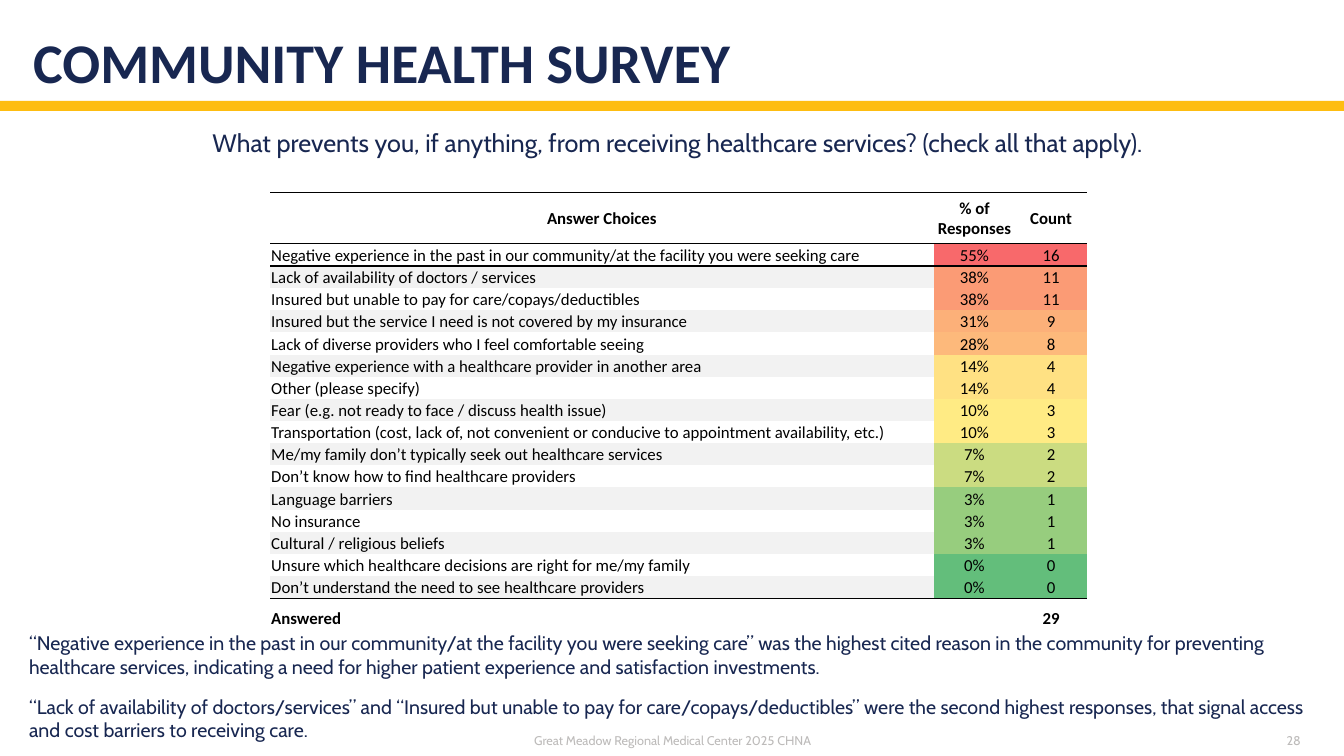
"""Build the community health survey slide on barriers to receiving care."""
from lxml import etree
from pptx import Presentation
from pptx import util as u
from pptx.dml.color import RGBColor
from pptx.enum import shapes, text
from pptx.oxml.ns import qn

TITLE = "COMMUNITY HEALTH SURVEY"
QUESTION = "What prevents you, if anything, from receiving healthcare services? (check all that apply)."
FOOTER = "Great Meadow Regional Medical Center 2025 CHNA"
PAGE_NUMBER = "28"
HEADINGS = ("Answer Choices", "% of Responses", "Count")
ANSWERED = 29
ANSWERS = [
    ("Negative experience in the past in our community/at the facility you were seeking care", 16),
    ("Lack of availability of doctors / services", 11),
    ("Insured but unable to pay for care/copays/deductibles", 11),
    ("Insured but the service I need is not covered by my insurance", 9),
    ("Lack of diverse providers who I feel comfortable seeing", 8),
    ("Negative experience with a healthcare provider in another area", 4),
    ("Other (please specify)", 4),
    ("Fear (e.g. not ready to face / discuss health issue)", 3),
    ("Transportation (cost, lack of, not convenient or conducive to appointment availability, etc.)", 3),
    ("Me/my family don’t typically seek out healthcare services", 2),
    ("Don’t know how to find healthcare providers", 2),
    ("Language barriers", 1),
    ("No insurance", 1),
    ("Cultural / religious beliefs", 1),
    ("Unsure which healthcare decisions are right for me/my family", 0),
    ("Don’t understand the need to see healthcare providers", 0),
]
FINDINGS = [
    "“Negative experience in the past in our community/at the facility you were seeking care” was the "
    "highest cited reason in the community for preventing healthcare services, indicating a need for "
    "higher patient experience and satisfaction investments.",
    "“Lack of availability of doctors/services” and “Insured but unable to pay for "
    "care/copays/deductibles” were the second highest responses, that signal access and cost barriers "
    "to receiving care.",
]
THEME = {
    "navy": "182751", "gold": "FEBD11", "grey": "BDBBBA", "black": "000000", "band": "F2F2F2",
    "heat": {16: "F8696B", 11: "FB9B75", 9: "FCB079", 8: "FDB97B", 4: "FFE183",
             3: "FFEB84", 2: "CBDC81", 1: "97CD7E", 0: "63BE7B"},
    "body": "Cabin", "strong": "Calibri",
    "title": 40, "question": 18, "finding": 14, "table": 12, "footer": 9,
}
COLUMNS = (6.58, 0.81, 0.71)
HEADER_HEIGHT, ROW_HEIGHT = 0.51, 0.22
LEFT, CENTER, RIGHT = text.PP_ALIGN.LEFT, text.PP_ALIGN.CENTER, text.PP_ALIGN.RIGHT
TOP, MIDDLE, BOTTOM = text.MSO_ANCHOR.TOP, text.MSO_ANCHOR.MIDDLE, text.MSO_ANCHOR.BOTTOM


def write(frame, lines, size, font=THEME["body"], color=THEME["navy"], bold=False,
          align=LEFT, line_spacing=None, after=0):
    for index, line in enumerate(lines):
        paragraph = frame.add_paragraph() if index else frame.paragraphs[0]
        paragraph.alignment = align
        paragraph.space_after = u.Pt(after)
        if line_spacing:
            paragraph.line_spacing = line_spacing
        run = paragraph.add_run()
        run.text = line
        run.font.size, run.font.name, run.font.bold = u.Pt(size), font, bold
        run.font.color.rgb = RGBColor.from_string(color)


def add_text(slide, box, lines, size, anchor=TOP, side_inset=0.1, **style):
    frame = slide.shapes.add_textbox(*map(u.Inches, box)).text_frame
    frame.word_wrap = True
    frame.vertical_anchor = anchor
    frame.margin_left = frame.margin_right = u.Inches(side_inset)
    write(frame, lines, size, **style)


def add_border(cell, side, width):
    line = etree.SubElement(cell._tc.get_or_add_tcPr(), qn(f"a:ln{side}"), w=str(u.Pt(width)))
    fill = etree.SubElement(line, qn("a:solidFill"))
    etree.SubElement(fill, qn("a:srgbClr"), val=THEME["black"])


def fill_cell(cell, label, align, anchor, bold, borders, color):
    cell.margin_left = cell.margin_right = cell.margin_top = u.Inches(0.01)
    cell.margin_bottom = 0
    cell.vertical_anchor = anchor
    write(cell.text_frame, [label], THEME["table"], font=THEME["strong"],
          color=THEME["black"], bold=bold, align=align)
    for side, width in borders.items():
        add_border(cell, side, width)
    if color:
        cell.fill.solid()
        cell.fill.fore_color.rgb = RGBColor.from_string(color)
    else:
        cell.fill.background()


def add_survey_table(slide, left, top):
    rows = [HEADINGS]
    rows += [(answer, f"{count / ANSWERED:.0%}", str(count)) for answer, count in ANSWERS]
    rows.append(("Answered", "", str(ANSWERED)))
    last = len(rows) - 1
    borders = {0: {"T": 1, "B": 1}, 1: {"T": 1}, last - 1: {"B": 0.5}, last: {"T": 0.5}}
    height = HEADER_HEIGHT + last * ROW_HEIGHT
    frame = slide.shapes.add_table(len(rows), len(COLUMNS), *map(
        u.Inches, (left, top, sum(COLUMNS), height)))
    for style in frame.element.iter(qn("a:tableStyleId")):
        style.text = "{2D5ABB26-0587-4C30-8999-92F81FD0307C}"
    table = frame.table
    table.first_row = table.horz_banding = False
    for column, width in zip(table.columns, COLUMNS):
        column.width = u.Inches(width)
    for row, labels in enumerate(rows):
        table.rows[row].height = u.Inches(ROW_HEIGHT if row else HEADER_HEIGHT)
        is_answer = 0 < row < last
        for column, label in enumerate(labels):
            color = None
            if is_answer and column:
                color = THEME["heat"][ANSWERS[row - 1][1]]
            elif is_answer and row % 2 == 0:
                color = THEME["band"]
            fill_cell(table.cell(row, column), label,
                      align=CENTER if column or not row else LEFT,
                      anchor=BOTTOM if row else MIDDLE, bold=not is_answer,
                      borders=borders.get(row, {}), color=color)


def main():
    presentation = Presentation()
    presentation.slide_width, presentation.slide_height = u.Inches(13.33), u.Inches(7.5)
    slide = presentation.slides.add_slide(presentation.slide_layouts[6])
    rule = slide.shapes.add_shape(shapes.MSO_SHAPE.RECTANGLE, *map(u.Inches, (0, 1, 13.33, 0.1)))
    rule.shadow.inherit = False
    rule.fill.solid()
    rule.fill.fore_color.rgb = RGBColor.from_string(THEME["gold"])
    rule.line.fill.background()
    add_text(slide, (0.33, 0, 12.67, 1), [TITLE], THEME["title"], anchor=BOTTOM, side_inset=0,
             font=THEME["strong"], bold=True, line_spacing=0.9)
    for box, label, align in (((2.67, 7.25, 8, 0.2), FOOTER, CENTER),
                              ((12, 7.25, 1, 0.2), PAGE_NUMBER, RIGHT)):
        add_text(slide, box, [label], THEME["footer"], anchor=MIDDLE,
                 color=THEME["grey"], align=align)
    add_survey_table(slide, 2.68, 1.91)
    add_text(slide, (0.33, 1.21, 12.78, 0.4), [QUESTION], THEME["question"], align=CENTER)
    add_text(slide, (0.19, 6.21, 12.93, 1.21), FINDINGS, THEME["finding"], after=12)
    presentation.save("out.pptx")


if __name__ == "__main__":
    main()
